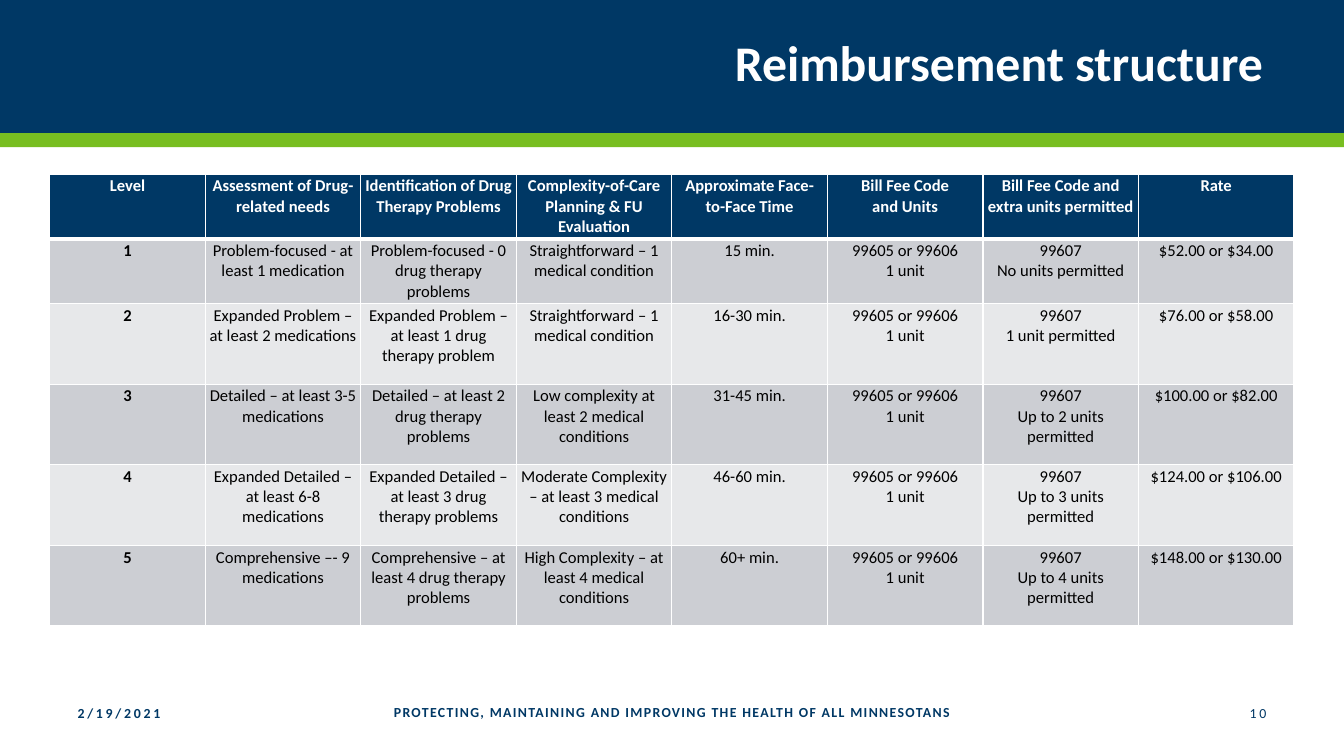
from lxml.etree import SubElement
from pptx import Presentation
from pptx.dml.color import RGBColor
from pptx.enum.shapes import MSO_SHAPE
from pptx.enum.text import MSO_ANCHOR, MSO_AUTO_SIZE, PP_ALIGN
from pptx.oxml.ns import qn
from pptx.util import Pt

NAVY, GREEN, WHITE, BLACK = "003865", "78BE21", "FFFFFF", "000000"
BANDS = ["CCCED3", "E7E8EA"]
LEFT, MID, RIGHT = PP_ALIGN.LEFT, PP_ALIGN.CENTER, PP_ALIGN.RIGHT

TITLE = "Reimbursement structure"
CODES = "99605 or 99606\n1 unit"
HEAD = ["Level", "Assessment of Drug-related needs",
        "Identification of Drug Therapy Problems",
        "Complexity-of-Care Planning & FU Evaluation",
        "Approximate Face-to-Face Time", "Bill Fee Code\nand Units",
        "Bill Fee Code and extra units permitted", "Rate"]
LEVELS = [
    ["1", "Problem-focused - at least 1 medication",
     "Problem-focused - 0 drug therapy problems",
     "Straightforward – 1 medical condition",
     "15 min.", CODES, "99607\nNo units permitted", "$52.00 or $34.00"],
    ["2", "Expanded Problem – at least 2 medications",
     "Expanded Problem – at least 1 drug therapy problem",
     "Straightforward – 1 medical condition",
     "16-30 min.", CODES, "99607\n1 unit permitted", "$76.00 or $58.00"],
    ["3", "Detailed – at least 3-5 medications",
     "Detailed – at least 2 drug therapy problems",
     "Low complexity at least 2 medical conditions",
     "31-45 min.", CODES, "99607\nUp to 2 units permitted", "$100.00 or $82.00"],
    ["4", "Expanded Detailed – at least 6-8 medications",
     "Expanded Detailed – at least 3 drug therapy problems",
     "Moderate Complexity – at least 3 medical conditions",
     "46-60 min.", CODES, "99607\nUp to 3 units permitted", "$124.00 or $106.00"],
    ["5", "Comprehensive –- 9 medications",
     "Comprehensive – at least 4 drug therapy problems",
     "High Complexity – at least 4 medical conditions",
     "60+ min.", CODES, "99607\nUp to 4 units permitted", "$148.00 or $130.00"],
]
# text, left, top, width, alignment, bold, letter spacing
FOOTER = [
    ("2/19/2021", 49, 501, 111, LEFT, True, 2),
    ("PROTECTING, MAINTAINING AND IMPROVING THE HEALTH OF ALL MINNESOTANS",
     160, 500.4, 652, MID, True, 1),
    ("10", 812, 501, 111, RIGHT, False, 2),
]
BARS = [(96, 10.5, GREEN), (0, 96, NAVY)]  # top, height, colour
HEIGHTS = [29.5, 29.5, 58.3, 58.3, 58.3, 58.3]
WIDE, TALL = 972, 540
COL = 112.5


def paint(fill, color):
    fill.solid()
    fill.fore_color.rgb = RGBColor.from_string(color)


def style(frame, size, color, bold, align, gap=0):
    """Format every paragraph and run; gap is letter spacing in points."""
    for para in frame.paragraphs:
        para.alignment = align
        for run in para.runs:
            font = run.font
            font.name, font.size, font.bold = "Calibri", Pt(size), bold
            font.color.rgb = RGBColor.from_string(color)
            if gap:
                run._r.get_or_add_rPr().set("spc", str(gap * 100))


def border(cell, side, width):
    line = SubElement(cell._tc.get_or_add_tcPr(), qn("a:ln" + side),
                      w=str(Pt(width)))
    SubElement(SubElement(line, qn("a:solidFill")), qn("a:srgbClr"), val=WHITE)


def add_title(slide):
    title = slide.shapes.title
    title.left, title.top, title.width, title.height = (
        Pt(0), Pt(0), Pt(921), Pt(95))
    paint(title.fill, NAVY)
    frame = title.text_frame
    frame.text = TITLE
    frame.auto_size = MSO_AUTO_SIZE.NONE
    frame.vertical_anchor = MSO_ANCHOR.MIDDLE
    frame.paragraphs[0].line_spacing = 0.9
    style(frame, 36, WHITE, True, RIGHT)
    for top, height, color in BARS:
        bar = slide.shapes.add_shape(MSO_SHAPE.RECTANGLE, Pt(0), Pt(top),
                                     Pt(WIDE), Pt(height))
        bar.shadow.inherit = False
        paint(bar.fill, color)
        bar.line.fill.background()
        title.element.addprevious(bar.element)


def add_rates(slide):
    rows = [HEAD] + LEVELS
    table = slide.shapes.add_table(
        len(rows), len(HEAD), Pt(36), Pt(126),
        Pt(COL * len(HEAD)), Pt(sum(HEIGHTS))).table
    for col in table.columns:
        col.width = Pt(COL)
    for r, texts in enumerate(rows):
        table.rows[r].height = Pt(HEIGHTS[r])
        for c, text in enumerate(texts):
            cell = table.cell(r, c)
            cell.text = text
            cell.margin_left = cell.margin_right = Pt(2.9)
            cell.margin_top = cell.margin_bottom = Pt(1.4)
            style(cell.text_frame, 12, BLACK if r else WHITE,
                  r == 0 or c == 0, MID)
            for side in "LRTB":
                heavy = (r, side) in [(0, "B"), (1, "T")]
                border(cell, side, 3 if heavy else 1)
            paint(cell.fill, BANDS[(r - 1) % 2] if r else NAVY)


def add_footer(slide):
    for text, left, top, width, align, bold, gap in FOOTER:
        frame = slide.shapes.add_textbox(Pt(left), Pt(top), Pt(width),
                                         Pt(28.8)).text_frame
        frame.text = text
        frame.word_wrap = True
        frame.vertical_anchor = MSO_ANCHOR.MIDDLE
        style(frame, 10, NAVY, bold, align, gap)


def main():
    deck = Presentation()
    deck.slide_width, deck.slide_height = Pt(WIDE), Pt(TALL)
    slide = deck.slides.add_slide(deck.slide_layouts[5])
    add_title(slide)
    add_rates(slide)
    add_footer(slide)
    deck.save("out.pptx")


if __name__ == "__main__":
    main()
